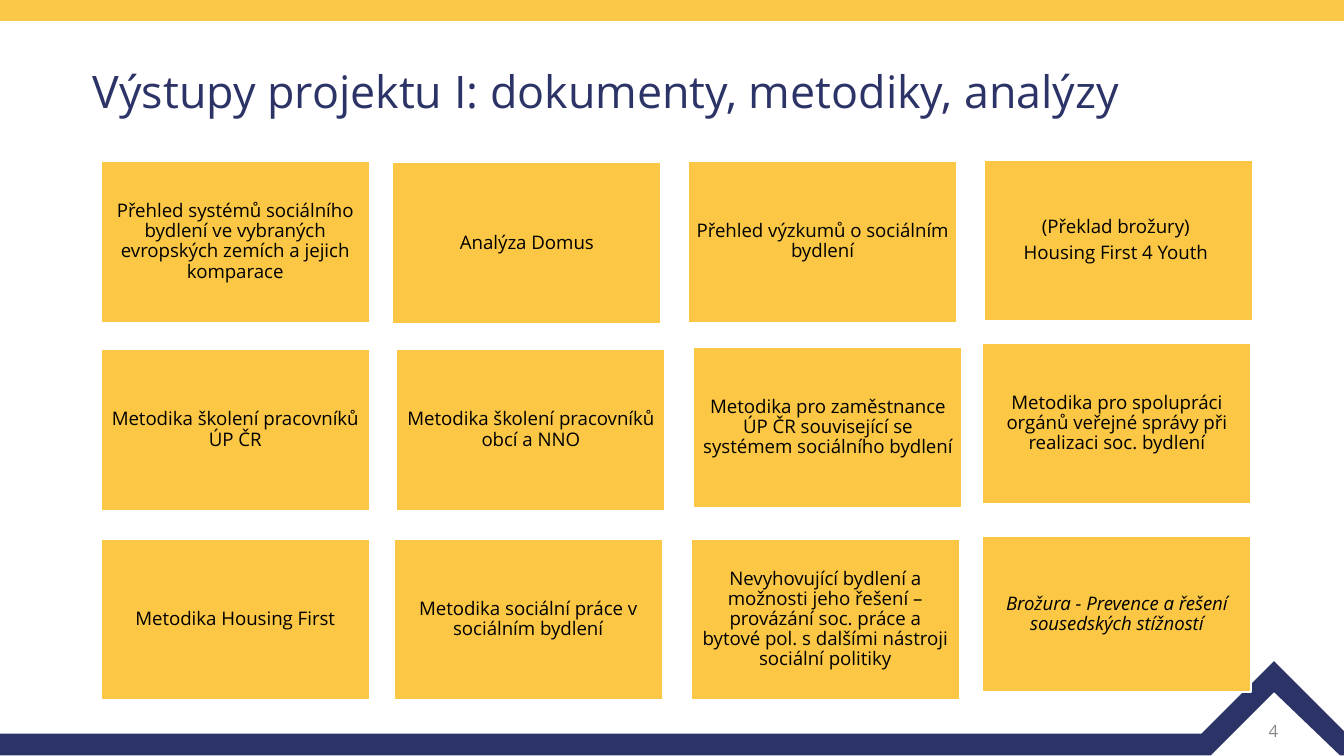
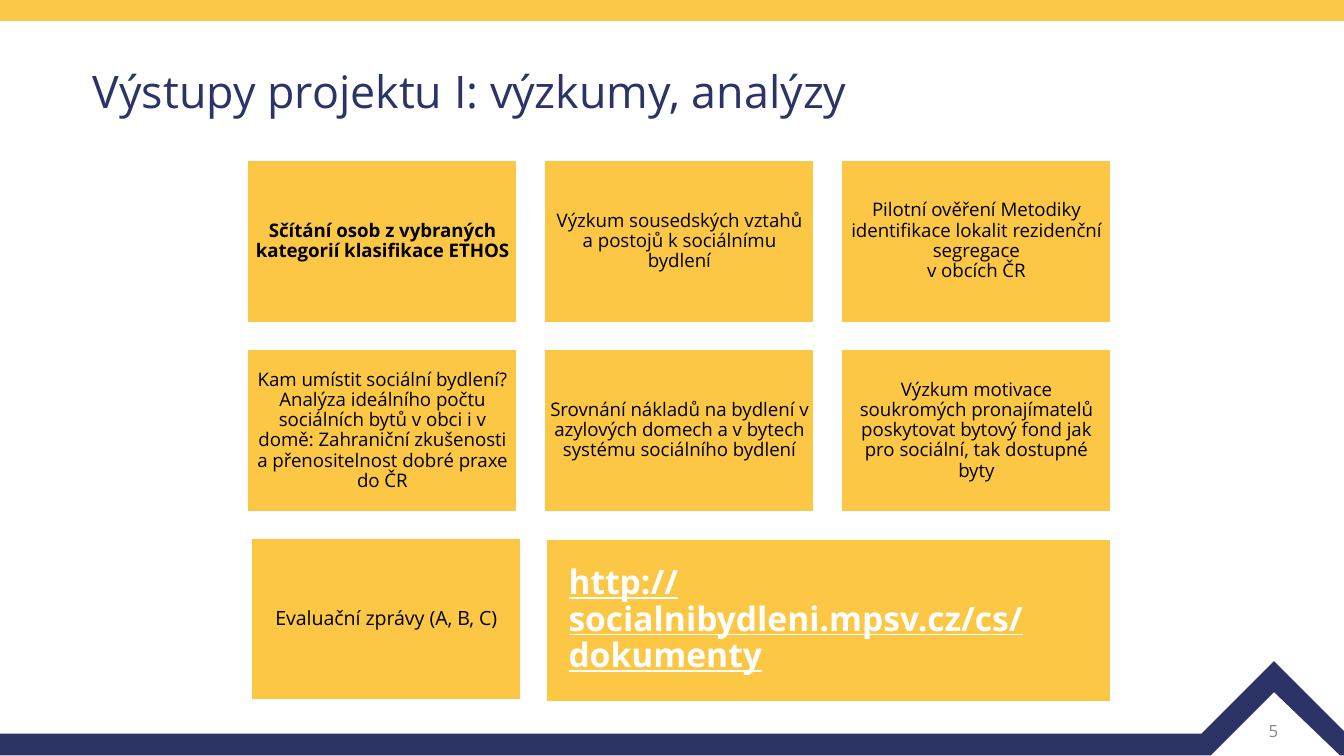
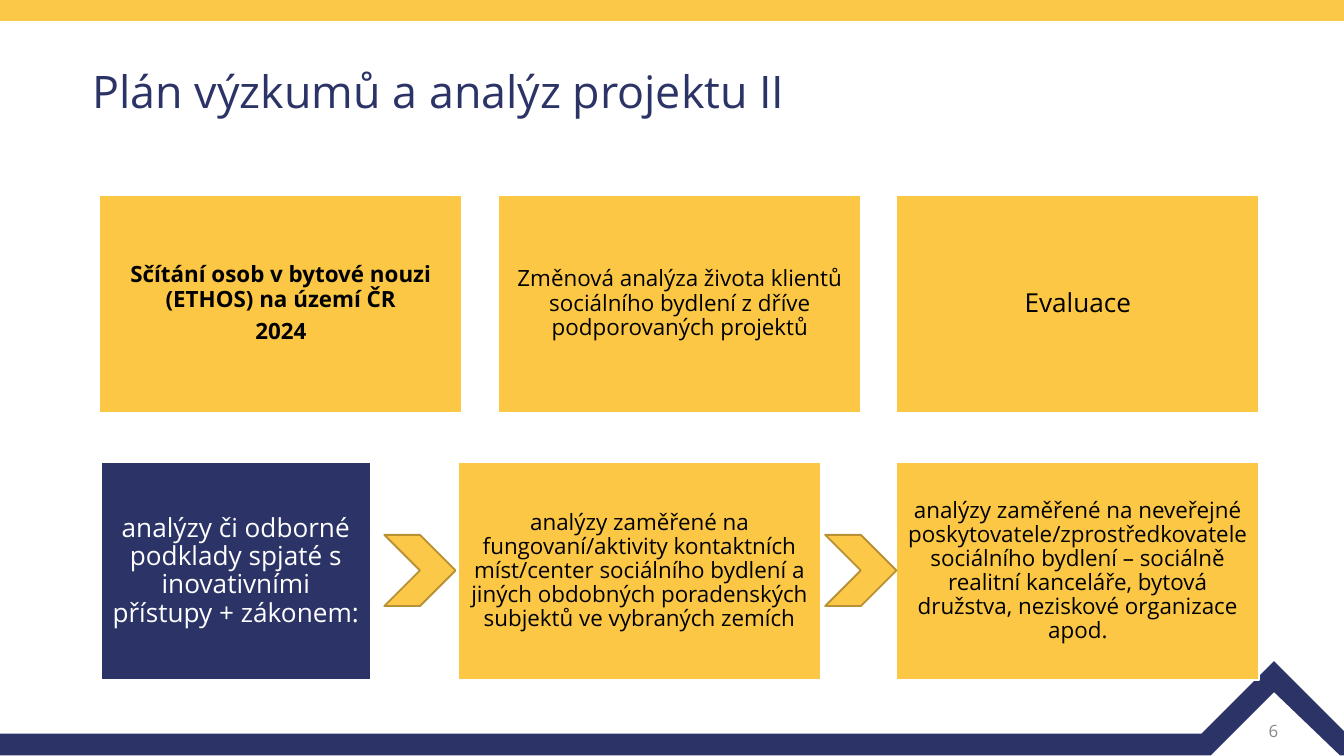
"""Builds three slides on the outputs and research plan of a social housing project."""
from copy import deepcopy

from pptx import Presentation
from pptx.dml.color import RGBColor
from pptx.enum.shapes import MSO_SHAPE
from pptx.enum.text import MSO_ANCHOR, PP_ALIGN
from pptx.oxml.ns import qn
from pptx.util import Inches, Pt

RECTANGLE, CHEVRON = MSO_SHAPE.RECTANGLE, MSO_SHAPE.CHEVRON
TOP, MIDDLE = MSO_ANCHOR.TOP, MSO_ANCHOR.MIDDLE
LEFT, CENTER = PP_ALIGN.LEFT, PP_ALIGN.CENTER
NAVY = RGBColor(0x2C, 0x34, 0x67)
YELLOW = RGBColor(0xFC, 0xC8, 0x47)
CARD_YELLOW = RGBColor(0xFB, 0xC7, 0x45)
OCHRE = RGBColor(0xB7, 0x91, 0x33)
GRAY = RGBColor(0x88, 0x88, 0x88)
BLACK = RGBColor(0, 0, 0)
WHITE = RGBColor(0xFF, 0xFF, 0xFF)
FONT = "Open Sans"
FIRST_NUMBER = 4
ROOF = [(9.48, 4.92), (10, 5.44), (10, 5.62), (9.97, 5.62), (9.48, 5.15),
        (9.01, 5.62), (0, 5.62), (0, 5.46), (8.94, 5.46)]
TOP_BAND = [(0, 0), (10, 0), (10, 0.16), (0, 0.16)]


def write(shape, paragraphs, size, color=BLACK, align=CENTER, anchor=MIDDLE,
          insets=(0.04, 0.04), spacing=0.9, gap=0, **font_format):
    """Fill a shape with formatted paragraphs."""
    frame = shape.text_frame
    horizontal, vertical = map(Inches, insets)
    frame_format = {"word_wrap": True, "vertical_anchor": anchor,
                    "margin_left": horizontal, "margin_right": horizontal,
                    "margin_top": vertical, "margin_bottom": vertical}
    for name, value in frame_format.items():
        setattr(frame, name, value)
    font_format = {"name": FONT, "size": Pt(size), **font_format}
    for index, text in enumerate(paragraphs):
        paragraph = frame.add_paragraph() if index else frame.paragraphs[0]
        paragraph.text = text
        paragraph.alignment = align
        paragraph.line_spacing = spacing
        paragraph.space_before = Pt(gap if index else 0)
        for run in paragraph.runs:
            for name, value in font_format.items():
                setattr(run.font, name, value)
            run.font.color.rgb = color
        for line_break in paragraph._p.findall(qn("a:br")):
            line_break.append(deepcopy(paragraph.runs[0]._r.rPr))


def paint(shape, fill, line=None):
    """Give a shape a flat fill and an optional one-point outline."""
    shape.shadow.inherit = False
    shape.fill.solid()
    shape.fill.fore_color.rgb = fill
    if line is None:
        shape.line.fill.background()
    else:
        shape.line.color.rgb = line
        shape.line.width = Pt(1)


documents = [
    (0.75, 1.2, ["Přehled systémů sociálního bydlení ve vybraných evropských zemích a jejich komparace"]),
    (5.12, 1.2, ["Přehled výzkumů o sociálním bydlení"]),
    (2.93, 4.01, ["Metodika sociální práce v sociálním bydlení"]),
    (5.16, 2.58, ["Metodika pro zaměstnance ÚP ČR související se systémem sociálního bydlení"]),
    (0.75, 2.6, ["Metodika školení pracovníků ÚP ČR"]),
    (2.95, 2.6, ["Metodika školení pracovníků obcí a NNO"]),
    (7.31, 2.55, ["Metodika pro spolupráci orgánů veřejné správy při realizaci soc. bydlení"]),
    (5.14, 4.01, ["Nevyhovující bydlení a možnosti jeho řešení – provázání soc. práce a\n"
                  "bytové pol. s dalšími nástroji sociální politiky"]),
    (0.75, 4.01, ["Metodika Housing First"]),
    (7.32, 1.19, ["(Překlad brožury) ", "Housing First 4 Youth "]),
    (2.92, 1.21, ["Analýza Domus"]),
]
document_cards = [((left, top, 2, 1.2), text, {"size": 10, "gap": 3.5})
                  for left, top, text in documents]
document_cards.append(((7.31, 3.99, 2, 1.16), ["Brožura - Prevence a řešení sousedských stížností"],
                       {"size": 10, "italic": True}))

studies = [
    "Sčítání osob z vybraných kategorií klasifikace ETHOS",
    "Výzkum sousedských vztahů a postojů k sociálnímu bydlení",
    "Pilotní ověření Metodiky identifikace lokalit rezidenční segregace\nv obcích ČR",
    "Kam umístit sociální bydlení? Analýza ideálního počtu sociálních bytů v obci i v domě: "
    "Zahraniční zkušenosti a přenositelnost dobré praxe do ČR",
    "Srovnání nákladů na bydlení v azylových domech a v bytech systému sociálního bydlení",
    "Výzkum motivace soukromých pronajímatelů poskytovat bytový fond jak pro sociální, tak dostupné byty",
]
study_cards = [((1.84 + 2.21 * (index % 3), 1.19 + 1.41 * (index // 3), 2.01, 1.21),
                [text], {"size": 10, "bold": index == 0})
               for index, text in enumerate(studies)]
study_cards += [
    ((1.87, 4, 2.01, 1.21), ["Evaluační zprávy (A, B, C)"], {"size": 10.5, "insets": (0.05, 0.05)}),
    ((4.06, 4.01, 4.21, 1.21), ["http://socialnibydleni.mpsv.cz/cs/dokumenty"],
     {"size": 18, "color": WHITE, "align": LEFT, "insets": (0.17, 0.07),
      "bold": True, "underline": True}),
]

plan_text = {"size": 12, "insets": (0.05, 0.05)}
large_text = {"size": 14, "insets": (0.06, 0.06)}
plan_cards = [
    ((0.74, 1.45, 2.7, 1.62), ["Sčítání osob v bytové nouzi (ETHOS) na území ČR", "2024"],
     {**plan_text, "gap": 4.2, "bold": True}),
    ((3.71, 1.45, 2.7, 1.62),
     ["Změnová analýza života klientů sociálního bydlení z dříve podporovaných projektů"], plan_text),
    ((6.67, 1.45, 2.7, 1.62), ["Evaluace"], large_text),
    ((3.41, 3.44, 2.7, 1.62),
     ["analýzy zaměřené na fungovaní/aktivity kontaktních míst/center sociálního bydlení "
      "a jiných obdobných poradenských subjektů ve vybraných zemích"], plan_text),
    ((6.67, 3.44, 2.7, 1.62),
     ["analýzy zaměřené na neveřejné poskytovatele/zprostředkovatele sociálního bydlení – "
      "sociálně realitní kanceláře, bytová družstva, neziskové organizace apod."], plan_text),
    ((0.75, 3.44, 2.01, 1.62),
     ["analýzy či odborné podklady spjaté s inovativními přístupy + zákonem:"],
     {**large_text, "color": WHITE, "fill": NAVY}),
]

slides = [
    ("Výstupy projektu I: dokumenty, metodiky, analýzy", document_cards, []),
    ("Výstupy projektu I: výzkumy, analýzy", study_cards, []),
    ("Plán výzkumů a analýz projektu II", plan_cards, [2.86, 6.14]),
]

presentation = Presentation()
presentation.slide_width = Inches(10)
presentation.slide_height = Inches(10 * 9 / 16)
blank_layout = presentation.slide_layouts[6]

for number, (title, cards, chevron_lefts) in enumerate(slides, FIRST_NUMBER):
    slide = presentation.slides.add_slide(blank_layout)
    for outline, color in ((ROOF, NAVY), (TOP_BAND, YELLOW)):
        points = [(Inches(x), Inches(y)) for x, y in outline]
        builder = slide.shapes.build_freeform(*points[0])
        builder.add_line_segments(points[1:], close=True)
        paint(builder.convert_to_shape(), color)

    number_box = slide.shapes.add_textbox(*map(Inches, (9, 5.29, 0.95, 0.3)))
    write(number_box, [str(number)], 9, GRAY, insets=(0.1, 0.05), spacing=1.0)
    title_box = slide.shapes.add_textbox(*map(Inches, (0.69, 0.47, 8.62, 0.92)))
    write(title_box, [title], 24, NAVY, LEFT, TOP, insets=(0, 0.05))

    for place, paragraphs, card_format in cards:
        card = slide.shapes.add_shape(RECTANGLE, *map(Inches, place))
        text_format = dict(card_format)
        paint(card, text_format.pop("fill", CARD_YELLOW), WHITE)
        write(card, paragraphs, **text_format)

    for left in chevron_lefts:
        chevron = slide.shapes.add_shape(CHEVRON, *map(Inches, (left, 3.98, 0.53, 0.53)))
        paint(chevron, YELLOW, OCHRE)

presentation.save("out.pptx")
